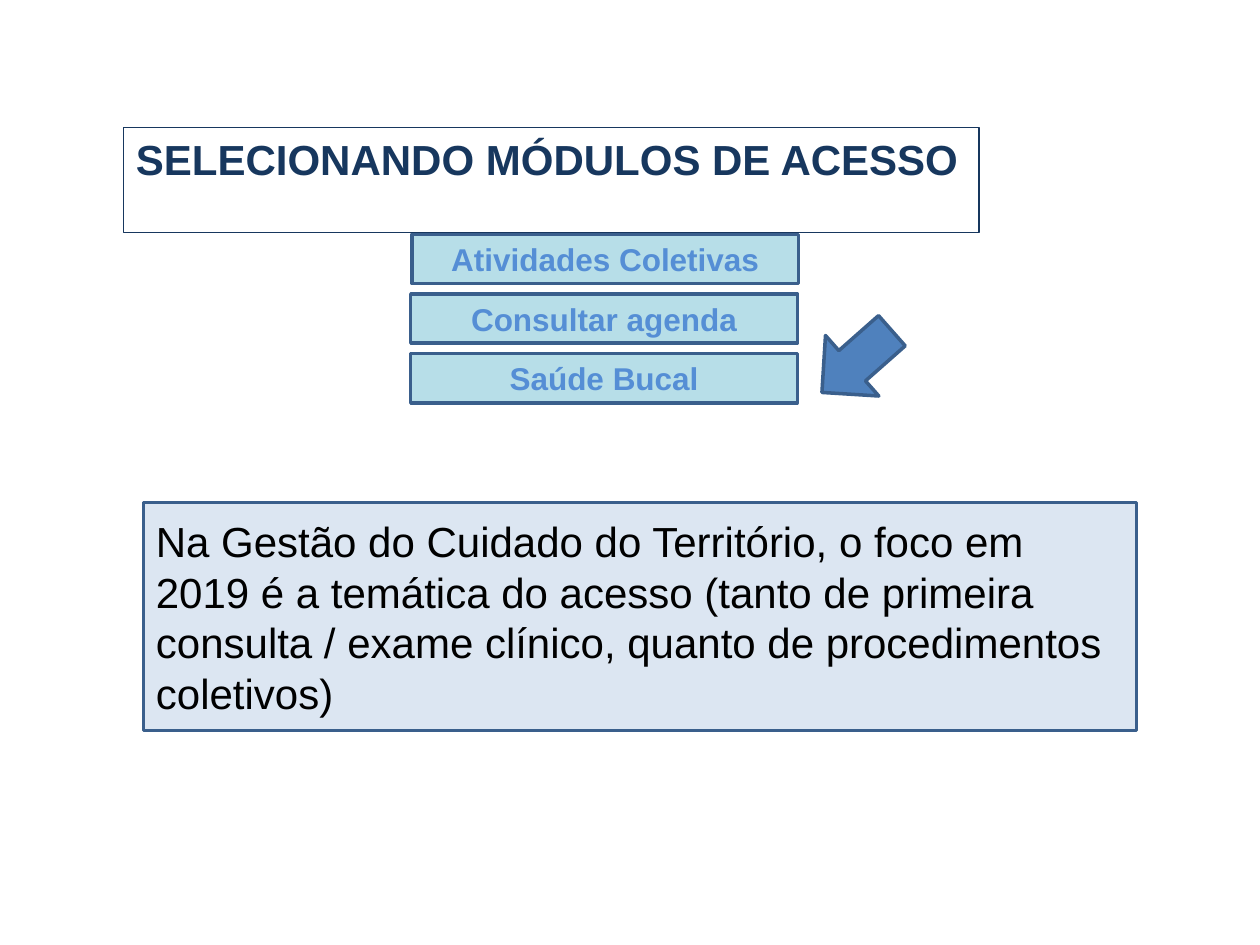
"""Build the slide on selecting access modules."""
from dataclasses import dataclass

from pptx import Presentation
from pptx.dml.color import RGBColor
from pptx.enum.shapes import MSO_SHAPE
from pptx.enum.text import MSO_ANCHOR, MSO_AUTO_SIZE, PP_ALIGN
from pptx.shapes.autoshape import Shape
from pptx.slide import Slide
from pptx.util import Pt

RECTANGLE, DOWN_ARROW = MSO_SHAPE.RECTANGLE, MSO_SHAPE.DOWN_ARROW
TOP, MIDDLE = MSO_ANCHOR.TOP, MSO_ANCHOR.MIDDLE
LEFT, CENTER = PP_ALIGN.LEFT, PP_ALIGN.CENTER
GROW = MSO_AUTO_SIZE.SHAPE_TO_FIT_TEXT

FONT = "Arial"
TITLE_ONLY = 5
BLACK = RGBColor(0x00, 0x00, 0x00)
NAVY = RGBColor(0x17, 0x37, 0x5E)
BORDER = RGBColor(0x3A, 0x5F, 0x8C)
BLUE = RGBColor(0x4F, 0x81, 0xBD)
LIGHT_BLUE = RGBColor(0x55, 0x8E, 0xD5)
AQUA = RGBColor(0xB7, 0xDE, 0xE8)
PALE_BLUE = RGBColor(0xDC, 0xE6, 0xF2)

BUTTON_TOP, BUTTON_STEP = 133.9, 34.1


@dataclass(frozen=True)
class Area:
    left: float
    top: float
    width: float
    height: float


@dataclass(frozen=True)
class Module:
    label: str
    left: float


MODULES = (
    Module("Atividades Coletivas", 235.4),
    Module("Consultar agenda", 234.7),
    Module("Saúde Bucal", 234.7),
)


def write_text(shape: Shape, text: str, *, size: float, color: RGBColor,
               bold: bool = False, align: PP_ALIGN = LEFT,
               anchor: MSO_ANCHOR = MIDDLE, wrap: bool = True) -> None:
    """Fill a shape with one formatted paragraph."""
    frame = shape.text_frame
    frame.text = text
    frame.word_wrap = wrap
    frame.vertical_anchor = anchor
    para = frame.paragraphs[0]
    para.alignment = align
    font = para.runs[0].font
    font.name, font.size, font.bold = FONT, Pt(size), bold
    font.color.rgb = color


def add_block(page: Slide, kind: MSO_SHAPE, area: Area, fill: RGBColor) -> Shape:
    """Add a filled, outlined shape without a shadow."""
    block = page.shapes.add_shape(
        kind, Pt(area.left), Pt(area.top), Pt(area.width), Pt(area.height))
    block.shadow.inherit = False
    block.fill.solid()
    block.fill.fore_color.rgb = fill
    block.line.color.rgb = BORDER
    block.line.width = Pt(2)
    return block


def place_title(page: Slide, text: str, area: Area) -> None:
    """Move, outline and write the title placeholder."""
    title = page.shapes.title
    title.left, title.top = Pt(area.left), Pt(area.top)
    title.width, title.height = Pt(area.width), Pt(area.height)
    title.line.color.rgb = NAVY
    title.line.width = Pt(0.75)
    write_text(title, text, size=24, color=NAVY, bold=True, anchor=TOP, wrap=False)
    title.text_frame.auto_size = GROW


def main() -> None:
    """Build and save the deck."""
    deck = Presentation()
    deck.slide_width, deck.slide_height = Pt(720), Pt(540)
    page = deck.slides.add_slide(deck.slide_layouts[TITLE_ONLY])

    place_title(page, "SELECIONANDO MÓDULOS DE ACESSO", Area(70.5, 72.7, 489, 36))

    focus = add_block(page, RECTANGLE, Area(82, 287.2, 567.4, 130.3), PALE_BLUE)
    write_text(
        focus,
        "Na Gestão do Cuidado do Território, o foco em 2019 é a temática do acesso "
        "(tanto de primeira consulta / exame clínico, quanto de procedimentos coletivos)",
        size=24, color=BLACK)

    for index, module in enumerate(MODULES):
        area = Area(module.left, BUTTON_TOP + index * BUTTON_STEP, 221, 28.1)
        button = add_block(page, RECTANGLE, area, AQUA)
        write_text(button, module.label, size=18, color=LIGHT_BLUE, bold=True, align=CENTER)

    arrow = add_block(page, DOWN_ARROW, Area(466.6, 180, 46.1, 53.3), BLUE)
    arrow.rotation = 48.6

    deck.save("out.pptx")


if __name__ == "__main__":
    main()
